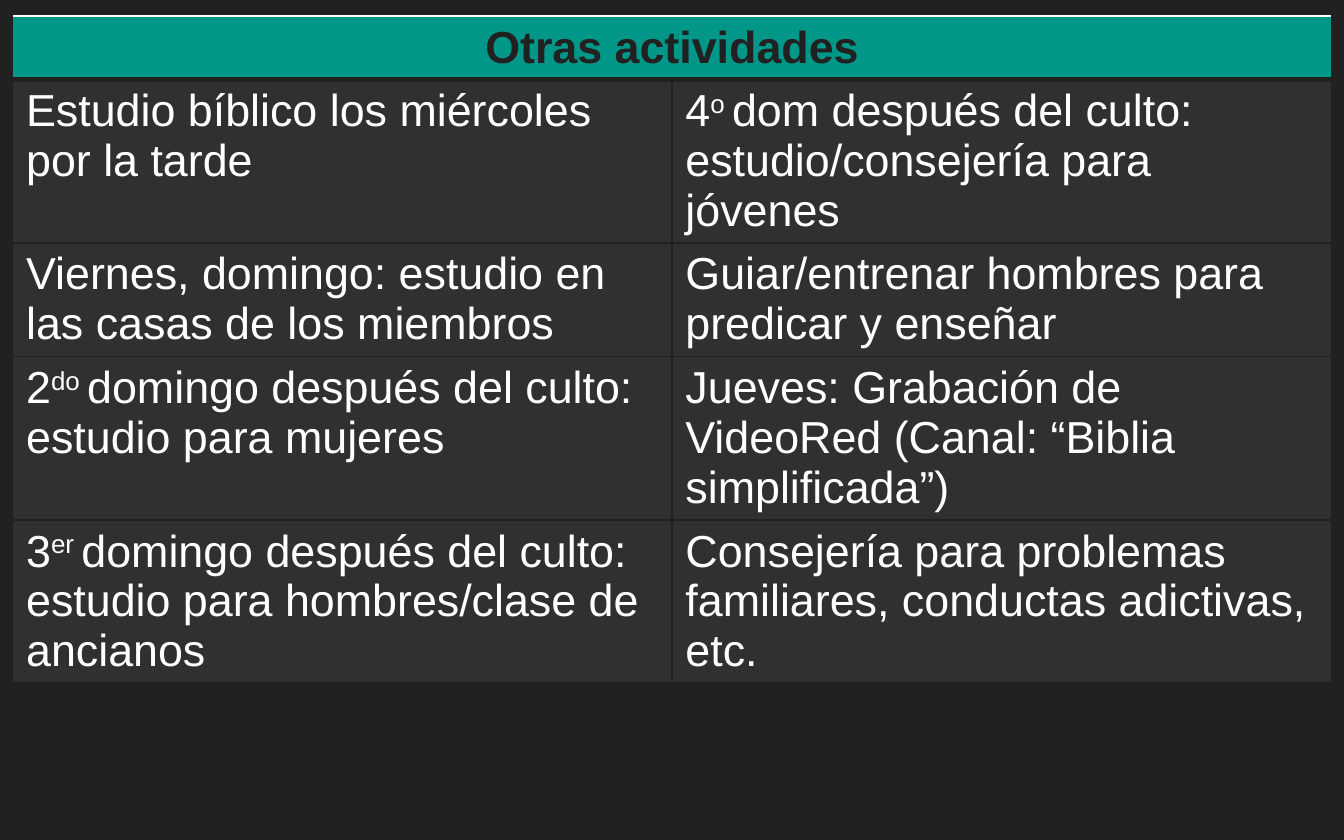
from lxml.etree import SubElement
from pptx import Presentation
from pptx.dml.color import RGBColor
from pptx.enum.text import PP_ALIGN
from pptx.oxml.ns import qn
from pptx.util import Cm, Pt

HEADING = "Otras actividades"
ACTIVITIES = [
    (
        ["Estudio bíblico los miércoles por la tarde"],
        ["4", "o ", "dom después del culto: estudio/consejería para jóvenes"],
    ),
    (
        ["Viernes, domingo: estudio en las casas de los miembros"],
        ["Guiar/entrenar hombres para predicar y enseñar"],
    ),
    (
        ["2", "do ", "domingo después del culto: estudio para mujeres"],
        ["Jueves: Grabación de VideoRed (Canal: “Biblia simplificada”)"],
    ),
    (
        ["3", "er ", "domingo después del culto: estudio para hombres/clase de ancianos"],
        ["Consejería para problemas familiares, conductas adictivas, etc."],
    ),
]
COLORS = {"dark": "212121", "heading": "009688", "panel": "303030", "light": "FFFFFF"}
ROW_HEIGHTS = [1.19, 3.09, 2.15, 2.15, 3.09]
COLUMN_WIDTH = 12.46
LEFT, TOP = 0.24, 0.3


def paint(fill, color):
    fill.solid()
    fill.fore_color.rgb = RGBColor.from_string(COLORS[color])


def add_border(cell, side, color="dark", width=1):
    line = SubElement(cell._tc.get_or_add_tcPr(), qn(f"a:ln{side}"), w=str(Pt(width)))
    solid = SubElement(line, qn("a:solidFill"))
    SubElement(solid, qn("a:srgbClr"), val=COLORS[color])


def write(cell, pieces, color, bold=False):
    paragraph = cell.text_frame.paragraphs[0]
    for position, piece in enumerate(pieces):
        run = paragraph.add_run()
        run.text = piece
        run.font.name = "Arial"
        run.font.size = Pt(24)
        run.font.bold = bold
        run.font.color.rgb = RGBColor.from_string(COLORS[color])
        if position == 1:
            run.font._element.set("baseline", "30000")
    return paragraph


def main():
    """Build the slide with the table of other activities."""
    presentation = Presentation()
    presentation.slide_width, presentation.slide_height = Cm(25.4), Cm(15.88)
    slide = presentation.slides.add_slide(presentation.slide_layouts[6])
    paint(slide.background.fill, "dark")

    schedule = slide.shapes.add_table(
        len(ROW_HEIGHTS), 2, Cm(LEFT), Cm(TOP), Cm(2 * COLUMN_WIDTH), Cm(sum(ROW_HEIGHTS))
    ).table
    for column in schedule.columns:
        column.width = Cm(COLUMN_WIDTH)
    for number, (row, height) in enumerate(zip(schedule.rows, ROW_HEIGHTS)):
        row.height = Cm(height)
        for cell in row.cells:
            add_border(cell, "L")
            add_border(cell, "R")
            add_border(cell, "T", "dark" if number else "light", 3 if number == 1 else 1)
            add_border(cell, "B", width=1 if number else 3)
            paint(cell.fill, "panel" if number else "heading")

    heading = schedule.cell(0, 0)
    heading.merge(schedule.cell(0, 1))
    write(heading, [HEADING], "dark", bold=True).alignment = PP_ALIGN.CENTER
    for number, activities in enumerate(ACTIVITIES, 1):
        for column, pieces in enumerate(activities):
            write(schedule.cell(number, column), pieces, "light")

    presentation.save("out.pptx")


if __name__ == "__main__":
    main()
